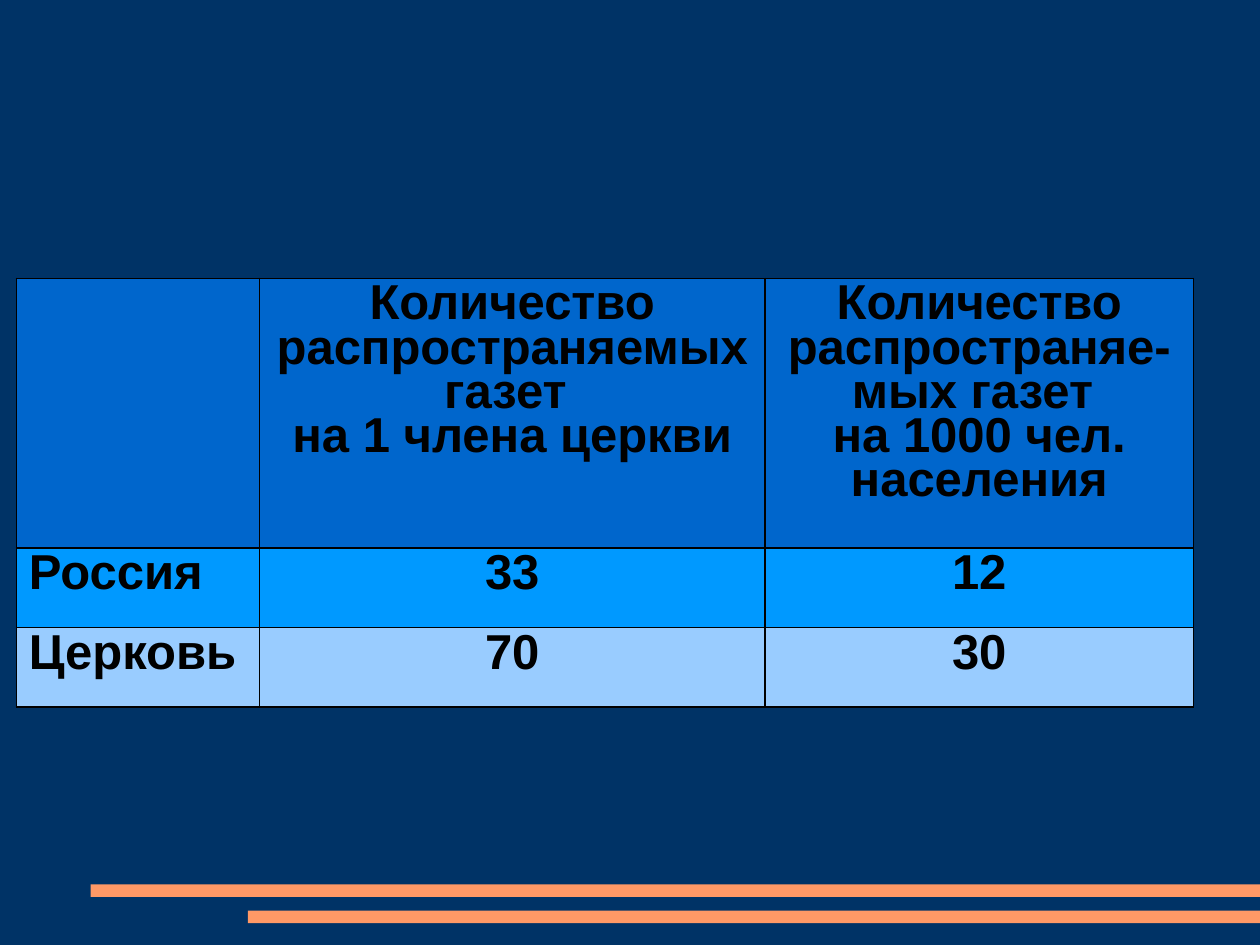
from lxml.etree import SubElement
from pptx import Presentation
from pptx.dml.color import RGBColor
from pptx.enum.shapes import MSO_SHAPE
from pptx.enum.text import PP_ALIGN
from pptx.oxml.ns import qn
from pptx.util import Cm, Pt

NAVY = RGBColor(0x00, 0x33, 0x66)
ORANGE = RGBColor(0xFF, 0x99, 0x66)
BLACK = RGBColor(0x00, 0x00, 0x00)
ROW_FILLS = [
    RGBColor(0x00, 0x66, 0xCC),
    RGBColor(0x00, 0x99, 0xFF),
    RGBColor(0x99, 0xCC, 0xFF),
]

ROWS = [
    ["",
     "Количество распространяемых газет \nна 1 члена церкви",
     "Количество распространяе-мых газет \nна 1000 чел. населения"],
    ["Россия", "33", "12"],
    ["Церковь", "70", "30"],
]
COLUMN_WIDTHS = [4.9, 10.19, 8.64]
ROW_HEIGHTS = [5.44, 1.6, 1.6]
TABLE_LEFT, TABLE_TOP = 0.33, 5.61

SLIDE_WIDTH, SLIDE_HEIGHT = 25.4, 19.05
BAR_HEIGHT = 0.25
BARS = [(1.83, 17.83), (5.0, 18.36)]  # left, top; each runs to the right edge


def add_bar(slide, left, top):
    bar = slide.shapes.add_shape(
        MSO_SHAPE.RECTANGLE, Cm(left), Cm(top), Cm(SLIDE_WIDTH - left), Cm(BAR_HEIGHT))
    bar.shadow.inherit = False
    bar.fill.solid()
    bar.fill.fore_color.rgb = ORANGE
    bar.line.fill.background()


def format_cell(cell, text, fill, alignment):
    # Borders must come before the fill in the cell properties.
    properties = cell._tc.get_or_add_tcPr()
    for side in ("a:lnL", "a:lnR", "a:lnT", "a:lnB"):
        border = SubElement(properties, qn(side), w=str(Pt(1)))
        SubElement(SubElement(border, qn("a:solidFill")), qn("a:srgbClr"), val=str(BLACK))
    cell.fill.solid()
    cell.fill.fore_color.rgb = fill
    cell.text = text
    for paragraph in cell.text_frame.paragraphs:
        paragraph.alignment = alignment
        paragraph.line_spacing = 0.81
        paragraph.font.name = "Arial"
        paragraph.font.size = Pt(28)
        paragraph.font.bold = True
        paragraph.font.color.rgb = BLACK


def add_newspaper_table(slide):
    table = slide.shapes.add_table(
        len(ROWS), len(COLUMN_WIDTHS), Cm(TABLE_LEFT), Cm(TABLE_TOP),
        Cm(sum(COLUMN_WIDTHS)), Cm(sum(ROW_HEIGHTS))).table
    for column, width in zip(table.columns, COLUMN_WIDTHS):
        column.width = Cm(width)
    for row, height, texts, fill in zip(table.rows, ROW_HEIGHTS, ROWS, ROW_FILLS):
        row.height = Cm(height)
        for index, (cell, text) in enumerate(zip(row.cells, texts)):
            format_cell(cell, text, fill, PP_ALIGN.CENTER if index else PP_ALIGN.LEFT)


def main():
    presentation = Presentation()
    presentation.slide_width = Cm(SLIDE_WIDTH)
    presentation.slide_height = Cm(SLIDE_HEIGHT)
    slide = presentation.slides.add_slide(presentation.slide_layouts[6])
    slide.background.fill.solid()
    slide.background.fill.fore_color.rgb = NAVY
    for left, top in BARS:
        add_bar(slide, left, top)
    add_newspaper_table(slide)
    presentation.save("out.pptx")


if __name__ == "__main__":
    main()
